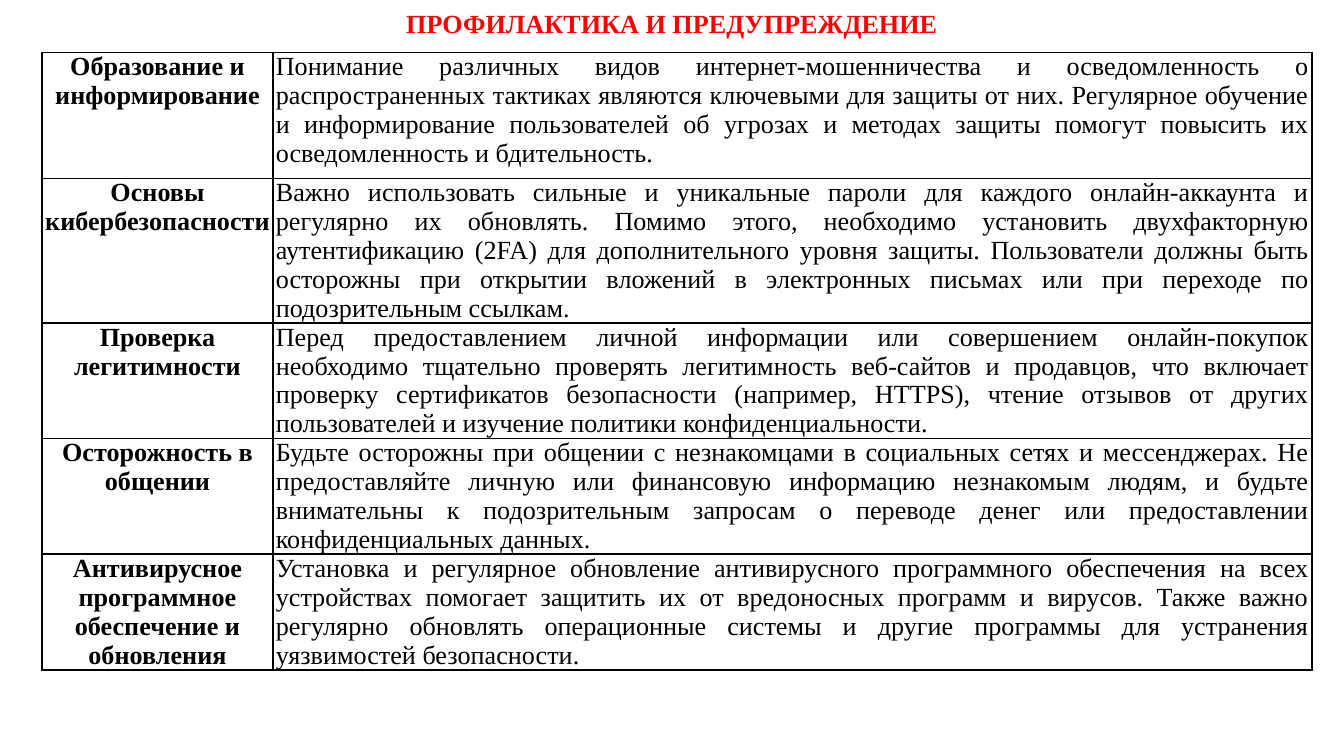
from lxml import etree
from pptx import Presentation
from pptx.dml.color import RGBColor
from pptx.enum import text
from pptx.oxml.ns import qn
from pptx.util import Pt

FONT = "Times New Roman"
SIZE = 14
BLACK, RED = "000000", "FF0000"
COLUMN_WIDTHS = (123.8, 556.6)
ROW_HEIGHTS = (67.5, 49, 40.3, 40.3, 35.3)

MEASURES = [
    ("Образование и информирование",
     "Понимание различных видов интернет-мошенничества и осведомленность о "
     "распространенных тактиках являются ключевыми для защиты от них. Регулярное "
     "обучение и информирование пользователей об угрозах и методах защиты помогут "
     "повысить их осведомленность и бдительность."),
    ("Основы кибербезопасности",
     "Важно использовать сильные и уникальные пароли для каждого онлайн-аккаунта и "
     "регулярно их обновлять. Помимо этого, необходимо установить двухфакторную "
     "аутентификацию (2FA) для дополнительного уровня защиты. Пользователи должны быть "
     "осторожны при открытии вложений в электронных письмах или при переходе по "
     "подозрительным ссылкам."),
    ("Проверка легитимности",
     "Перед предоставлением личной информации или совершением онлайн-покупок "
     "необходимо тщательно проверять легитимность веб-сайтов и продавцов, что включает "
     "проверку сертификатов безопасности (например, HTTPS), чтение отзывов от других "
     "пользователей и изучение политики конфиденциальности."),
    ("Осторожность в общении",
     "Будьте осторожны при общении с незнакомцами в социальных сетях и мессенджерах. Не "
     "предоставляйте личную или финансовую информацию незнакомым людям, и будьте "
     "внимательны к подозрительным запросам о переводе денег или предоставлении "
     "конфиденциальных данных."),
    ("Антивирусное программное обеспечение и обновления",
     "Установка и регулярное обновление антивирусного программного обеспечения на всех "
     "устройствах помогает защитить их от вредоносных программ и вирусов. Также важно "
     "регулярно обновлять операционные системы и другие программы для устранения "
     "уязвимостей безопасности."),
]


def rgb(color):
    return RGBColor.from_string(color)


def write(tf, content, align, color=BLACK, bold=False):
    tf.text = content
    p = tf.paragraphs[0]
    p.alignment = align
    font = p.runs[0].font
    font.name, font.size, font.bold = FONT, Pt(SIZE), bold
    font.color.rgb = rgb(color)


def set_borders(cell, color=BLACK, width=1):
    tc_pr = cell._tc.get_or_add_tcPr()
    for i, side in enumerate(("lnL", "lnR", "lnT", "lnB")):
        ln = etree.Element(qn(f"a:{side}"), w=str(Pt(width)))
        fill = etree.SubElement(ln, qn("a:solidFill"))
        etree.SubElement(fill, qn("a:srgbClr"), val=color)
        tc_pr.insert(i, ln)  # borders must precede the fill


def add_title(slide, content):
    box = slide.shapes.add_textbox(Pt(0), Pt(0), Pt(720), Pt(24.5))
    tf = box.text_frame
    tf.word_wrap = True
    tf.auto_size = text.MSO_AUTO_SIZE.SHAPE_TO_FIT_TEXT
    tf.vertical_anchor = text.MSO_ANCHOR.MIDDLE
    write(tf, content, text.PP_ALIGN.CENTER, RED, bold=True)


def fill_cell(cell, content, align, bold):
    cell.margin_left = cell.margin_right = Pt(1.5)
    cell.margin_top = cell.margin_bottom = Pt(0)
    cell.fill.background()
    set_borders(cell)
    write(cell.text_frame, content, align, bold=bold)


def add_measures_table(slide):
    height = Pt(353)
    frame = slide.shapes.add_table(len(MEASURES), 2, Pt(22.5), Pt(28.1),
                                   Pt(sum(COLUMN_WIDTHS)), height)
    table = frame.table
    table.first_row = table.horz_banding = False
    for column, width in zip(table.columns, COLUMN_WIDTHS):
        column.width = Pt(width)
    for row, row_height, (name, advice) in zip(table.rows, ROW_HEIGHTS, MEASURES):
        row.height = Pt(row_height)
        fill_cell(row.cells[0], name, text.PP_ALIGN.CENTER, True)
        fill_cell(row.cells[1], advice, text.PP_ALIGN.JUSTIFY, False)
    frame.height = height  # leaves room for rows that grow with their text


def main():
    prs = Presentation()
    prs.slide_width, prs.slide_height = Pt(720), Pt(405)
    slide = prs.slides.add_slide(prs.slide_layouts[6])
    add_measures_table(slide)
    add_title(slide, "ПРОФИЛАКТИКА И ПРЕДУПРЕЖДЕНИЕ")
    prs.save("out.pptx")


if __name__ == "__main__":
    main()
